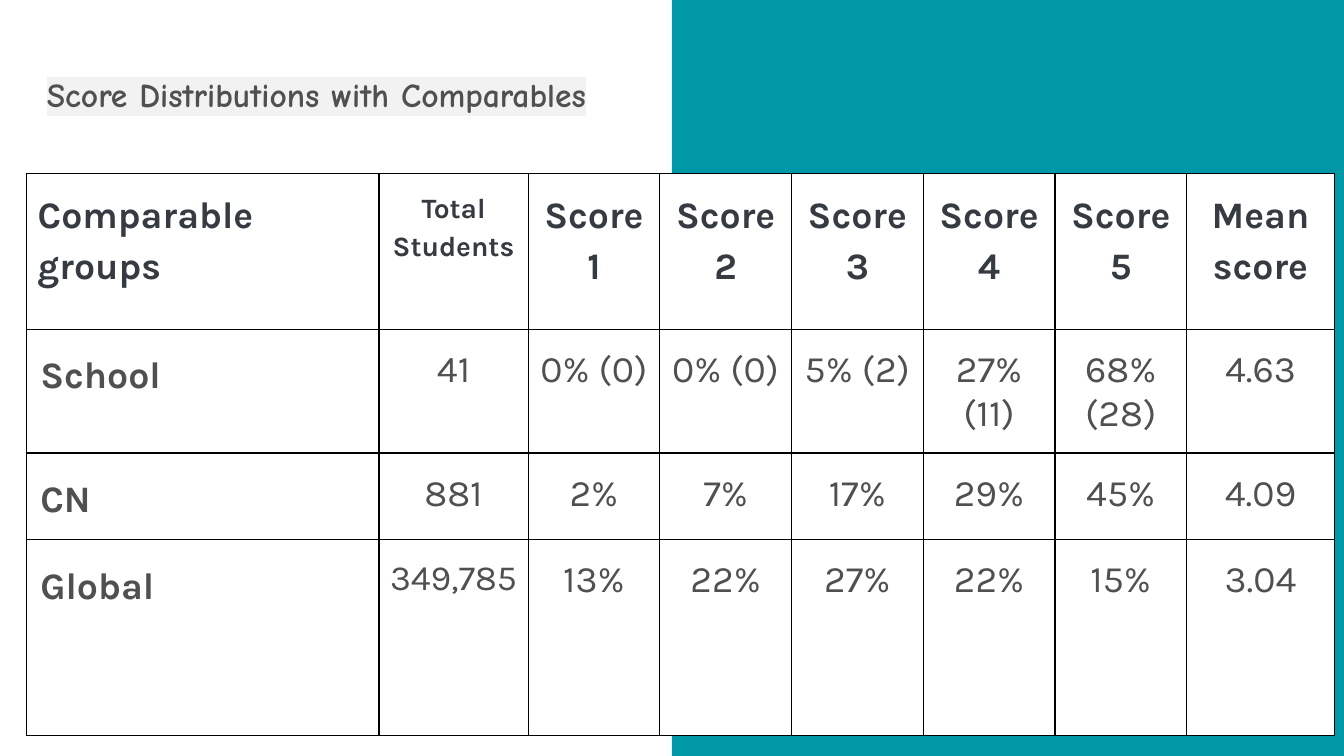
from pptx import Presentation
from pptx.dml.color import RGBColor
from pptx.enum.shapes import MSO_SHAPE as Shape
from pptx.enum.text import MSO_ANCHOR as Anchor, PP_ALIGN as Align
from pptx.oxml import parse_xml
from pptx.oxml.ns import nsdecls
from pptx.util import Inches, Pt

TEAL = RGBColor(0x00, 0x97, 0xA7)
WHITE = RGBColor(0xFF, 0xFF, 0xFF)
DARK = RGBColor(0x36, 0x3B, 0x42)
GRAY = RGBColor(0x50, 0x50, 0x50)
BLACK = RGBColor(0x00, 0x00, 0x00)
PALE = RGBColor(0xF2, 0xF2, 0xF2)


def write(frame, text, size=20, font="Karla", color=GRAY, bold=False,
          align=Align.LEFT, space=1.0, after=0):
    para = frame.paragraphs[0]
    para.alignment = align
    para.line_spacing = space
    para.space_after = Pt(after)
    run = para.add_run()
    run.text = text
    run.font.size = Pt(size)
    run.font.name = font
    run.font.bold = bold
    run.font.color.rgb = color
    return run


def border(cell):
    props = cell._tc.get_or_add_tcPr()
    for spot, side in enumerate("LRTB"):
        props.insert(spot, parse_xml(
            f'<a:ln{side} {nsdecls("a")} w="{Pt(0.75)}"><a:solidFill>'
            f'<a:srgbClr val="{BLACK}"/></a:solidFill></a:ln{side}>'))


deck = Presentation()
deck.slide_width = Inches(10)
deck.slide_height = Inches(10) * 9 // 16
slide = deck.slides.add_slide(deck.slide_layouts[6])
slide.background.fill.solid()
slide.background.fill.fore_color.rgb = WHITE

panel = slide.shapes.add_shape(
    Shape.RECTANGLE, Inches(5), Inches(0), Inches(5), deck.slide_height)
panel.shadow.inherit = False
panel.fill.solid()
panel.fill.fore_color.rgb = TEAL
panel.line.fill.background()

rows = [
    ["Comparable groups", "Total Students", "Score 1", "Score 2", "Score 3",
     "Score 4", "Score 5", "Mean score"],
    ["School", "41", "0% (0)", "0% (0)", "5% (2)", "27% (11)", "68% (28)", "4.63"],
    ["CN", "881", "2%", "7%", "17%", "29%", "45%", "4.09"],
    ["Global", "349,785", "13%", "22%", "27%", "22%", "15%", "3.04"],
]
widths = [2.62, 1.11] + [0.98] * 5 + [1.1]
heights = [1.16, 0.53, 0.53, 1.46]
sizes = {"Total Students": 15, "349,785": 19}

table = slide.shapes.add_table(
    len(rows), len(widths), Inches(0.2), Inches(1.29),
    Inches(sum(widths)), Inches(sum(heights))).table
for col, width in zip(table.columns, widths):
    col.width = Inches(width)
for row, height in zip(table.rows, heights):
    row.height = Inches(height)

for r, row in enumerate(rows):
    for c, text in enumerate(row):
        cell = table.cell(r, c)
        head, label = r == 0, c == 0
        cell.fill.solid()
        cell.fill.fore_color.rgb = WHITE
        cell.margin_left = Inches(0.1 if label and not head else 0.08)
        cell.margin_right = Inches(0.08)
        cell.margin_top = Inches(0.11 if head else 0.14)
        cell.margin_bottom = Inches(0.11 if head else 0.13)
        write(cell.text_frame, text, size=sizes.get(text, 20),
              color=DARK if head else GRAY, bold=head or label,
              align=Align.LEFT if label else Align.CENTER,
              space=1.15 if head or label else 1.0)
        border(cell)

title = slide.shapes.add_textbox(Inches(0.25), Inches(0.12), Inches(9.41), Inches(1.08))
frame = title.text_frame
frame.word_wrap = True
frame.vertical_anchor = Anchor.MIDDLE
frame.margin_left = frame.margin_right = Inches(0.1)
frame.margin_top = frame.margin_bottom = Inches(0.1)
run = write(frame, "Score Distributions with Comparables", size=18,
            font="Comic Neue", bold=True, space=1.26, after=18)
mark = parse_xml(f'<a:highlight {nsdecls("a")}><a:srgbClr val="{PALE}"/></a:highlight>')
run._r.get_or_add_rPr().insert(1, mark)

deck.save("out.pptx")
